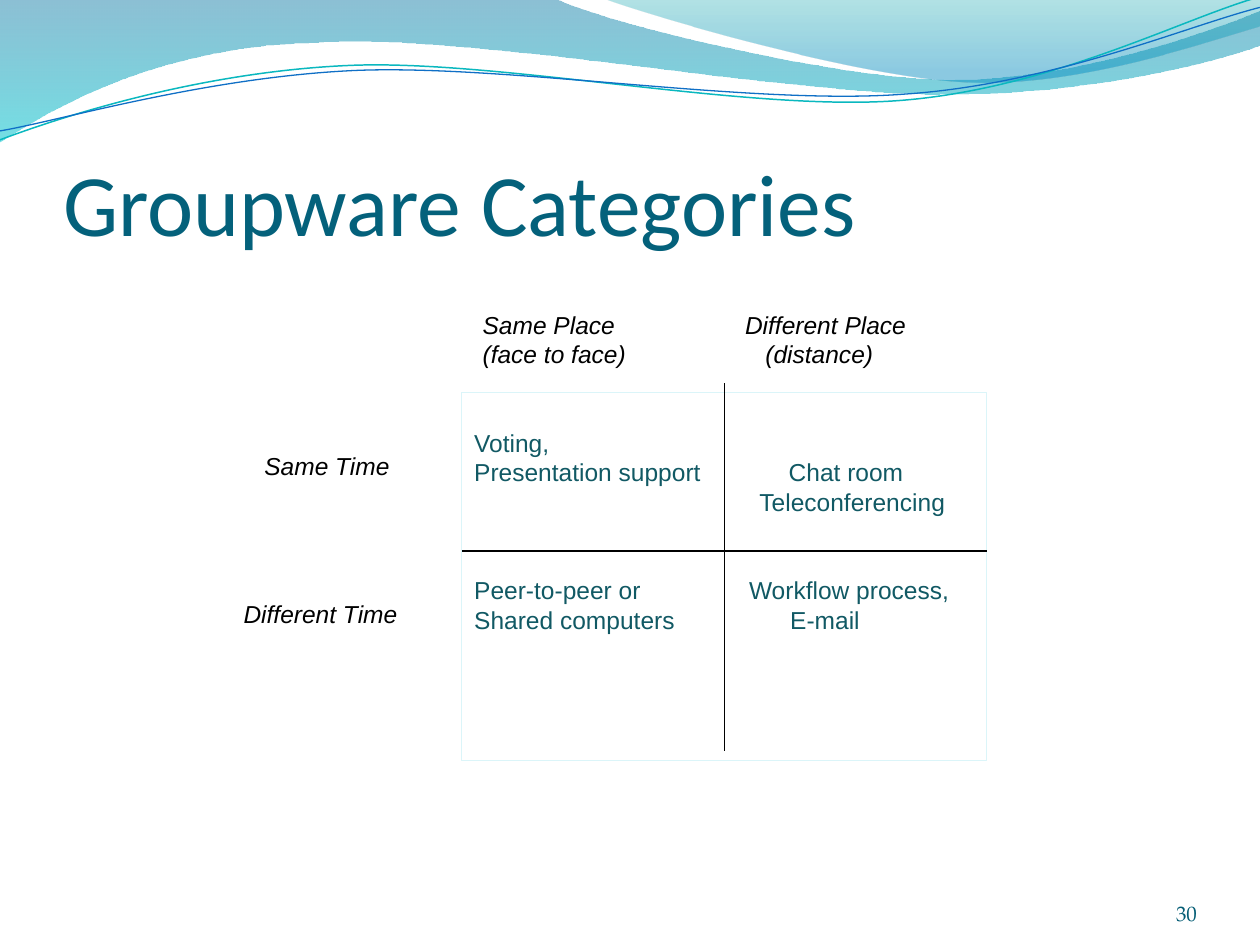
from dataclasses import dataclass
from typing import Optional

from lxml.etree import SubElement
from pptx import Presentation
from pptx.dml.color import RGBColor
from pptx.enum.shapes import MSO_CONNECTOR, MSO_SHAPE
from pptx.enum.text import MSO_ANCHOR as Anchor, MSO_AUTO_SIZE as AutoSize, PP_ALIGN as Align
from pptx.oxml.ns import qn
from pptx.util import Cm, Pt

COLORS = {
    "title": "04617B", "number": "045D75", "body": "115964", "black": "000000",
    "white": "FFFFFF", "frame": "DBF5F9", "teal": "0AB8BF", "blue": "0F6FC6",
    "deep_blue": "0074A1", "aqua": "00C6CF", "sea": "00A1A9", "sky": "008BBF",
}


@dataclass
class GradientStop:
    position: float
    color: str
    opacity: int


@dataclass
class Wave:
    start: tuple
    segments: list
    gradient: Optional[list] = None
    line: Optional[str] = None
    width: float = 0


@dataclass
class Label:
    lines: list
    left: float
    top: float
    width: float
    height: float
    last_indent: float = 0


@dataclass
class MatrixLine:
    left_text: str
    right_text: str = ""
    tab: float = 0
    space_before: float = 0


WAVES = [
    Wave((0, 0), [
        (11.2, -0.02),
        (12.09, 0.43, 16.87, 1.6, 19.25, 1.6),
        (21.67, 1.6, 24.33, 0.66, 25.4, 0.23),
        (25.42, 0.91),
        (24.97, 1.12, 22.1, 1.93, 18.95, 1.9),
        (15.8, 1.9, 9.7, 0.71, 6.53, 0.86),
        (3.28, 0.91, 1.17, 2.11, -0.02, 2.87),
    ], gradient=[GradientStop(0, "deep_blue", 45), GradientStop(1, "aqua", 55)]),
    Wave((12.17, -0.02), [
        (12.93, 0.28, 17.32, 1.57, 19.53, 1.65),
        (21.74, 1.75, 24.41, 0.81, 25.4, 0.53),
        (25.4, 0),
    ], gradient=[GradientStop(0, "sea", 30), GradientStop(0.8, "sky", 45)]),
    Wave((0, 2.82), [
        (1.22, 2.36, 4.01, 1.45, 7.04, 1.32),
        (10.03, 1.19, 15.06, 2.26, 18.11, 2.03),
        (21.16, 1.8, 23.83, 0.38, 25.35, -0.05),
    ], line="teal", width=0.85),
    Wave((0, 2.64), [
        (1.19, 2.44, 4.17, 1.55, 7.19, 1.42),
        (10.24, 1.3, 15.16, 2.13, 18.21, 1.9),
        (21.23, 1.7, 23.9, 0.53, 25.4, 0.15),
    ], line="blue", width=0.75),
]

LABELS = [
    Label(["Different Time"], 4.66, 11.96, 3.81, 0.84),
    Label(["Same Time"], 5.08, 8.97, 3.6, 0.84),
    Label(["Same Place", "(face to face)"], 9.48, 6.12, 3.86, 1.45),
    Label(["Different Place", "(distance)"], 14.77, 6.12, 4.06, 1.45, last_indent=0.41),
]

MATRIX_LINES = [
    MatrixLine("Voting,"),
    MatrixLine("Presentation support", "Chat room", 6.34),
    MatrixLine("", "Teleconferencing", 5.75),
    MatrixLine("Peer-to-peer or", "Workflow process,", 5.54, space_before=1.19),
    MatrixLine("Shared computers", "E-mail", 6.37),
]


def rgb(name: str) -> RGBColor:
    return RGBColor.from_string(COLORS[name])


def add_run(paragraph, text: str, size: float, color: str, font="Arial", italic=False) -> None:
    run = paragraph.add_run()
    run.text = text
    run.font.size = Pt(size)
    run.font.name = font
    run.font.italic = italic
    run.font.color.rgb = rgb(color)


def set_insets(frame, left: float, top: float, right: float, bottom: float) -> None:
    frame.margin_left, frame.margin_top = Cm(left), Cm(top)
    frame.margin_right, frame.margin_bottom = Cm(right), Cm(bottom)


def bend_segments(ribbon, segments: list) -> None:
    sides = iter(list(ribbon._element.spPr.iter(qn("a:lnTo"))))
    for segment in segments:
        side = next(sides)
        if len(segment) == 2:
            continue
        side.tag = qn("a:cubicBezTo")
        curve = side
        for _ in range(2):
            knot = next(sides)
            curve.append(knot[0])
            knot.getparent().remove(knot)


def draw_wave(slide, wave: Wave) -> None:
    knots = [segment[i:i + 2] for segment in wave.segments for i in range(0, len(segment), 2)]
    builder = slide.shapes.build_freeform(Cm(wave.start[0]), Cm(wave.start[1]))
    builder.add_line_segments([(Cm(x), Cm(y)) for x, y in knots], close=wave.gradient is not None)
    ribbon = builder.convert_to_shape()
    bend_segments(ribbon, wave.segments)
    ribbon.shadow.inherit = False
    if wave.gradient is None:
        ribbon.fill.background()
        ribbon.line.color.rgb = rgb(wave.line)
        ribbon.line.width = Pt(wave.width)
        return
    ribbon.line.fill.background()
    ribbon.fill.gradient()
    ribbon.fill.gradient_angle = 270
    for stop, wanted in zip(ribbon.fill.gradient_stops, wave.gradient):
        stop.position = wanted.position
        stop.color.rgb = rgb(wanted.color)
    for tint, wanted in zip(ribbon._element.spPr.iter(qn("a:srgbClr")), wave.gradient):
        SubElement(tint, qn("a:alpha"), val=str(wanted.opacity * 1000))


def draw_label(slide, label: Label) -> None:
    box = slide.shapes.add_textbox(Cm(label.left), Cm(label.top), Cm(label.width), Cm(label.height))
    frame = box.text_frame
    frame.word_wrap = True
    frame.auto_size = AutoSize.SHAPE_TO_FIT_TEXT
    for index, line in enumerate(label.lines):
        paragraph = frame.add_paragraph() if index else frame.paragraphs[0]
        add_run(paragraph, line, 14, "black", italic=True)
    if label.last_indent:
        paragraph._p.get_or_add_pPr().set("marL", str(Cm(label.last_indent)))


def draw_matrix(slide) -> None:
    matrix = slide.shapes.add_shape(MSO_SHAPE.RECTANGLE, Cm(9.31), Cm(7.92), Cm(10.58), Cm(7.41))
    matrix.shadow.inherit = False
    matrix.fill.solid()
    matrix.fill.fore_color.rgb = rgb("white")
    matrix.line.color.rgb = rgb("frame")
    matrix.line.width = Pt(0.75)
    frame = matrix.text_frame
    frame.word_wrap = True
    frame.vertical_anchor = Anchor.TOP
    set_insets(frame, 0.25, 0.71, 0.25, 0.13)
    for index, line in enumerate(MATRIX_LINES):
        paragraph = frame.add_paragraph() if index else frame.paragraphs[0]
        paragraph.alignment = Align.LEFT
        if line.space_before:
            paragraph.space_before = Cm(line.space_before)
        if line.left_text:
            add_run(paragraph, line.left_text, 14, "body")
        if line.right_text:
            tabs = SubElement(paragraph._p.get_or_add_pPr(), qn("a:tabLst"))
            SubElement(tabs, qn("a:tab"), pos=str(Cm(line.tab)), algn="l")
            add_run(paragraph, "\t" + line.right_text, 14, "body")


def draw_divider(slide, x1: float, y1: float, x2: float, y2: float) -> None:
    divider = slide.shapes.add_connector(MSO_CONNECTOR.STRAIGHT, Cm(x1), Cm(y1), Cm(x2), Cm(y2))
    divider.line.color.rgb = rgb("black")
    divider.line.width = Pt(0.75)
    SubElement(divider._element.spPr, qn("a:effectLst"))


def draw_title(slide) -> None:
    title = slide.shapes.title
    title.left, title.top, title.width, title.height = Cm(1.27), Cm(1.95), Cm(22.86), Cm(3.18)
    frame = title.text_frame
    frame.auto_size = AutoSize.NONE
    frame.vertical_anchor = Anchor.BOTTOM
    set_insets(frame, 0, 0.13, 0, 0)
    frame.paragraphs[0].alignment = Align.LEFT
    add_run(frame.paragraphs[0], "Groupware Categories", 50, "title", font="Calibri")


def draw_page_number(slide) -> None:
    frame = slide.shapes.add_textbox(Cm(22.01), Cm(17.65), Cm(2.12), Cm(1.02)).text_frame
    frame.word_wrap = True
    frame.vertical_anchor = Anchor.BOTTOM
    set_insets(frame, 0, 0, 0, 0)
    frame.paragraphs[0].alignment = Align.RIGHT
    add_run(frame.paragraphs[0], "30", 12, "number", font="TeX Gyre Pagella")


def main() -> None:
    deck = Presentation()
    deck.slide_width, deck.slide_height = Cm(25.4), Cm(19.05)
    slide = deck.slides.add_slide(deck.slide_layouts[5])
    for wave in WAVES:
        draw_wave(slide, wave)
    draw_page_number(slide)
    draw_title(slide)
    draw_matrix(slide)
    draw_divider(slide, 9.31, 11.11, 19.89, 11.11)
    draw_divider(slide, 14.6, 7.73, 14.6, 15.13)
    for label in LABELS:
        draw_label(slide, label)
    deck.save("out.pptx")


if __name__ == "__main__":
    main()
